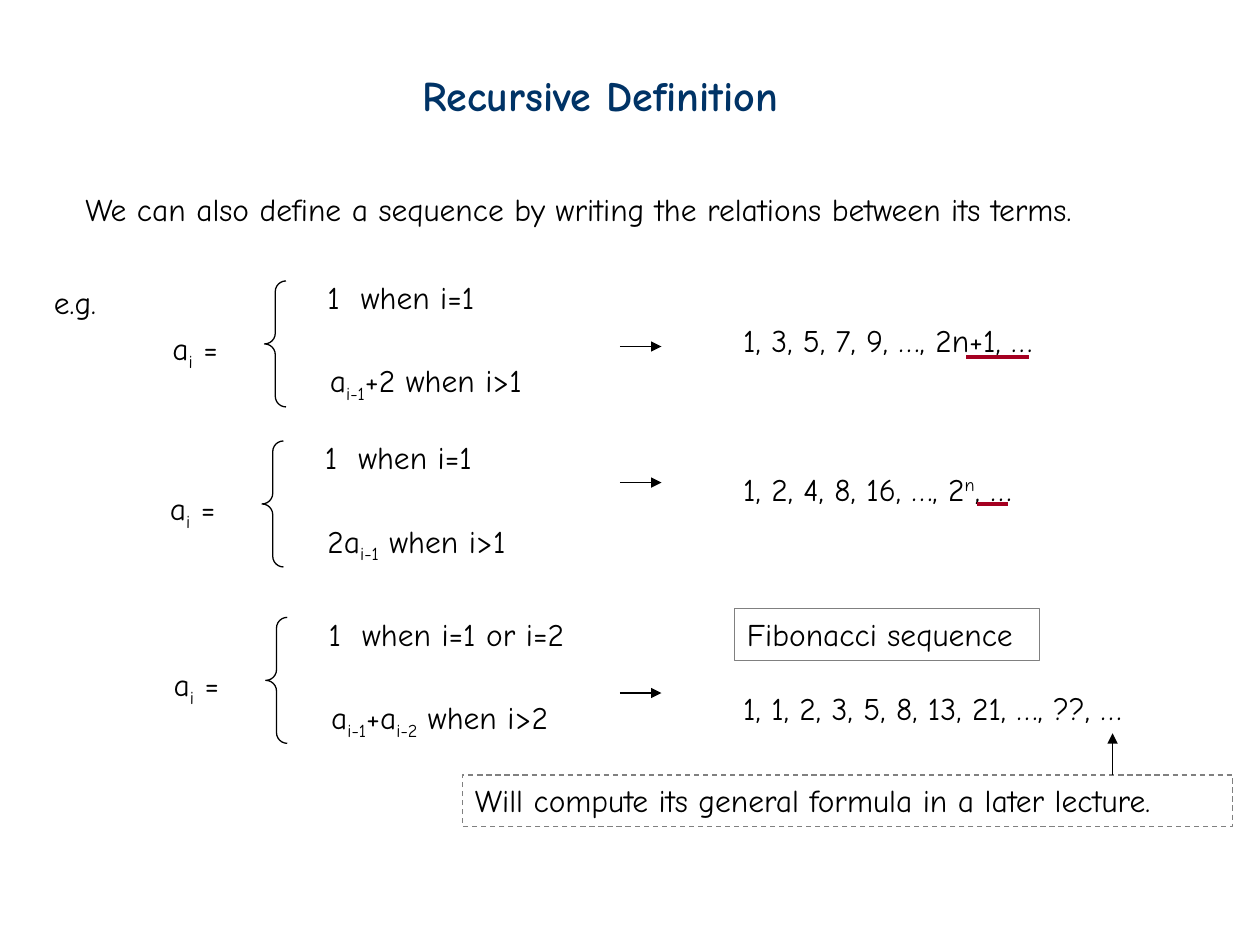
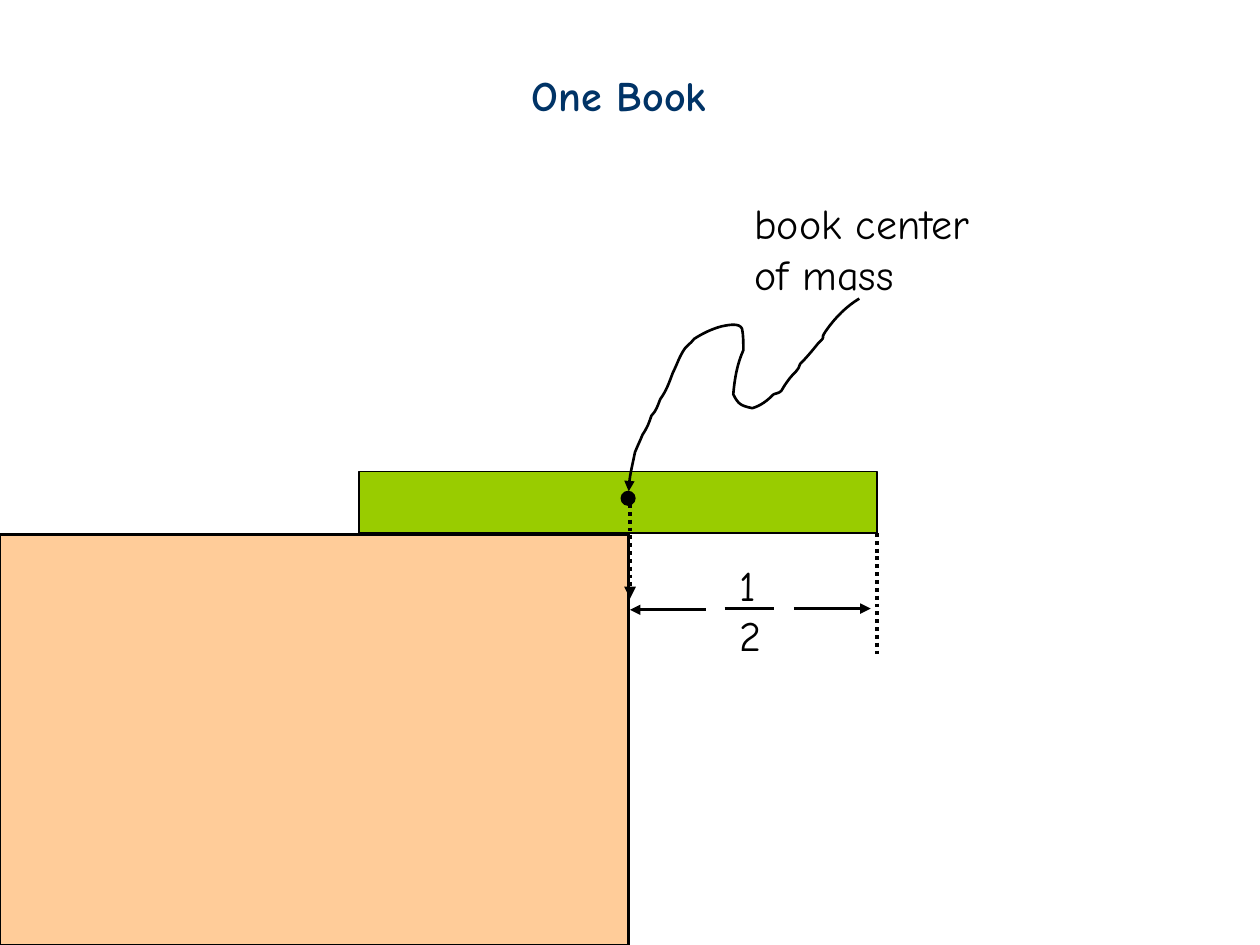
"""Build two slides: recursive sequences and the one-book balance."""
from typing import NamedTuple

from lxml import etree
from pptx import Presentation
from pptx.dml.color import RGBColor
from pptx.enum.dml import MSO_LINE
from pptx.enum.shapes import MSO_CONNECTOR, MSO_SHAPE
from pptx.enum.text import MSO_ANCHOR, MSO_AUTO_SIZE, PP_ALIGN
from pptx.oxml.ns import qn
from pptx.util import Pt

PX = 9144
DASH, DOT = MSO_LINE.DASH, MSO_LINE.ROUND_DOT
RECT, OVAL, BRACE = MSO_SHAPE.RECTANGLE, MSO_SHAPE.OVAL, MSO_SHAPE.LEFT_BRACE
STRAIGHT = MSO_CONNECTOR.STRAIGHT
LEFT, TOP = PP_ALIGN.LEFT, MSO_ANCHOR.TOP
GROW = MSO_AUTO_SIZE.SHAPE_TO_FIT_TEXT
HEX = {"ink": "000000", "title": "003366", "red": "A50021", "grey": "808080",
       "desk": "FFCC99", "book": "99CC00"}
FACE = "Comic Neue"
BODY = {"name": FACE, "size": Pt(18), "bold": False}
LARGE = {**BODY, "size": Pt(24)}
HEAD = {**LARGE, "bold": True}
SUB, SUPER = -25000, 30000


class Box(NamedTuple):
    """Left, top, width and height in px."""
    x: int
    y: int
    w: int
    h: int


class Pen(NamedTuple):
    """Line width in points, colour, dash and arrow tip."""
    width: float = 0.75
    color: str = "ink"
    dash: object = None
    tip: bool = False


class Rule(NamedTuple):
    """One recursive definition; its words mark shifted runs with bars."""
    x: int
    y: int
    first: str
    wide: int
    then: str
    span: int
    arrow: int
    terms: str
    size: Box


class Stroke(NamedTuple):
    """A straight line between two points."""
    x: int
    y: int
    x2: int
    y2: int
    pen: Pen


THIN, MID = Pen(), Pen(1.5)
ARROW, DART = Pen(tip=True), Pen(1.5, tip=True)
MARK = Pen(2.25, "red")
RULES = (
    Rule(210, 223, "1  when i=1", 143, "a|i-1|+2 when i>1", 180, 275,
         "1, 3, 5, 7, 9, …, 2n+1, …", Box(580, 250, 279, 40)),
    Rule(208, 350, "1  when i=1", 143, "2a|i-1| when i>1", 168, 383,
         "1, 2, 4, 8, 16, …, 2|n|, …", Box(580, 368, 262, 40)),
    Rule(211, 490, "1  when i=1 or i=2", 218, "a|i-1|+a|i-2| when i>2", 204, 550,
         "1, 1, 2, 3, 5, 8, 13, 21, …, ??, …", Box(580, 542, 361, 40)),
)
NOTES = (
    ("Fibonacci sequence", Box(583, 483, 242, 41), Pen(color="grey")),
    ("Will compute its general formula in a later lecture.",
     Box(367, 615, 611, 41), Pen(color="grey", dash=DASH)),
)
EXTRAS = (Stroke(767, 283, 817, 283, MARK), Stroke(775, 400, 800, 400, MARK),
          Stroke(883, 615, 883, 582, ARROW))
EDGES = (Stroke(0, 424, 500, 424, MID), Stroke(499, 424, 499, 750, MID))
SPANS = (
    Stroke(696, 423, 696, 521, Pen(2.25, dash=DOT)),
    Stroke(575, 483, 614, 483, MID),
    Stroke(630, 483, 691, 483, DART),
    Stroke(560, 484, 500, 484, DART),
    Stroke(500, 400, 500, 475, Pen(2.25, dash=DOT, tip=True)),
)
CURVE = (
    (682, 237), (672, 243), (663, 252), (656, 262), (649, 272), (658, 264), (649, 273),
    (645, 278), (640, 284), (635, 289), (634, 294), (630, 296), (627, 300),
    (617, 313), (623, 310), (614, 313), (609, 318), (604, 322), (597, 324),
    (588, 322), (586, 321), (582, 313), (583, 301), (585, 289), (590, 278),
    (590, 272), (590, 266), (589, 261), (587, 256), (578, 258), (573, 259),
    (565, 261), (557, 265), (551, 269), (548, 273), (544, 275), (542, 279),
    (539, 284), (537, 290), (534, 296), (531, 304), (529, 310), (524, 317),
    (522, 322), (521, 326), (517, 330), (515, 336), (514, 339), (510, 345),
    (508, 350), (506, 354), (504, 359), (502, 369), (499, 380), (499, 390),
)


def rgb(name: str) -> RGBColor:
    """Look up a named colour."""
    return RGBColor.from_string(HEX[name])


def style(item, fmt: dict) -> None:
    """Set each format value on an object."""
    for key, val in fmt.items():
        setattr(item, key, val)


def place(shape, box: Box) -> None:
    """Move and size a shape."""
    for key, val in zip(("left", "top", "width", "height"), box):
        setattr(shape, key, val * PX)


def ink(shape, pen: Pen) -> None:
    """Draw the outline of a shape with a pen."""
    line = shape.line
    line.color.rgb = rgb(pen.color)
    line.width = Pt(pen.width)
    if pen.dash:
        line.dash_style = pen.dash
    if pen.tip:
        etree.SubElement(line._get_or_add_ln(), qn("a:tailEnd"), type="triangle")


def write(shape, words: str, fmt: dict, color: str = "ink",
          shift: int = SUB, wrap: bool = False) -> None:
    """Fill a shape with left-aligned text, shifting runs between bars."""
    frame = shape.text_frame
    style(frame, {"word_wrap": wrap, "auto_size": GROW, "vertical_anchor": TOP})
    for row, text in enumerate(words.split("\n")):
        para = frame.add_paragraph() if row else frame.paragraphs[0]
        para.alignment = LEFT
        for num, part in enumerate(text.split("|")):
            run = para.add_run()
            run.text = part
            style(run.font, fmt)
            run.font.color.rgb = rgb(color)
            if num % 2:
                run.font._element.set("baseline", str(shift))


def label(slide, box: Box, words: str, fmt: dict = BODY,
          shift: int = SUB, wrap: bool = False) -> None:
    """Add a text box."""
    shape = slide.shapes.add_textbox(*(n * PX for n in box))
    write(shape, words, fmt, shift=shift, wrap=wrap)


def form(slide, kind, box: Box, fill: str = "", pen: Pen = THIN):
    """Add a preset shape."""
    shape = slide.shapes.add_shape(kind, *(n * PX for n in box))
    shape.shadow.inherit = False
    if fill:
        shape.fill.solid()
        shape.fill.fore_color.rgb = rgb(fill)
    else:
        shape.fill.background()
    ink(shape, pen)
    return shape


def draw(slide, stroke: Stroke) -> None:
    """Add a straight line or arrow."""
    line = slide.shapes.add_connector(STRAIGHT, *(n * PX for n in stroke[:4]))
    ink(line, stroke.pen)
    etree.SubElement(line.element.spPr, qn("a:effectLst"))


def bend(slide, dots: tuple, pen: Pen) -> None:
    """Add an open curve, each three points after the first a cubic arc."""
    maker = slide.shapes.build_freeform(*dots[0], scale=PX)
    maker.add_line_segments(dots[1:], close=False)
    shape = maker.convert_to_shape()
    shape.shadow.inherit = False
    shape.fill.background()
    ink(shape, pen)
    legs = list(shape.element.iter(qn("a:lnTo")))
    for start in range(0, len(legs), 3):
        arc = etree.Element(qn("a:cubicBezTo"))
        legs[start].addprevious(arc)
        for leg in legs[start:start + 3]:
            arc.append(leg[0])
            leg.getparent().remove(leg)


def page(deck, words: str, box: Box):
    """Add a slide with its title."""
    slide = deck.slides.add_slide(deck.slide_layouts[5])
    title = slide.shapes.title
    place(title, box)
    write(title, words, HEAD, "title")
    return slide


def define(slide, rule: Rule) -> None:
    """Draw one definition, its arrow and its terms."""
    x, y = rule.x, rule.y
    form(slide, BRACE, Box(x, y, 17, 100)).adjustments[0] = 0.5
    label(slide, Box(x - 83, y + 33, 58, 40), "a|i| =")
    label(slide, Box(x + 40, y - 7, rule.wide, 40), rule.first)
    label(slide, Box(x + 42, y + 59, rule.span, 40), rule.then)
    label(slide, rule.size, rule.terms, shift=SUPER)
    draw(slide, Stroke(492, rule.arrow, 525, rule.arrow, ARROW))


def series(deck) -> None:
    """Build the slide of recursive definitions."""
    slide = page(deck, "Recursive Definition", Box(325, 50, 341, 50))
    label(slide, Box(58, 146, 881, 40),
          "We can also define a sequence by writing the relations between its terms.")
    label(slide, Box(33, 220, 60, 40), "e.g.")
    for rule in RULES:
        define(slide, rule)
    for words, box, pen in NOTES:
        write(form(slide, RECT, box, pen=pen), words, BODY)
    for stroke in EXTRAS:
        draw(slide, stroke)


def balance(deck) -> None:
    """Build the slide of a book on a desk edge."""
    slide = page(deck, "One Book", Box(412, 50, 171, 50))
    form(slide, RECT, Box(0, 424, 499, 326), "desk")
    for stroke in EDGES:
        draw(slide, stroke)
    form(slide, RECT, Box(285, 374, 411, 49), "book")
    form(slide, OVAL, Box(493, 390, 11, 11), "ink")
    label(slide, Box(577, 439, 40, 90), "1\n2", LARGE)
    for stroke in SPANS:
        draw(slide, stroke)
    bend(slide, CURVE, DART)
    label(slide, Box(589, 152, 220, 90), "book center\nof mass", LARGE, wrap=True)


def main() -> None:
    """Build and save the deck."""
    deck = Presentation()
    style(deck, {"slide_width": 1000 * PX, "slide_height": 750 * PX})
    series(deck)
    balance(deck)
    deck.save("out.pptx")


if __name__ == "__main__":
    main()
